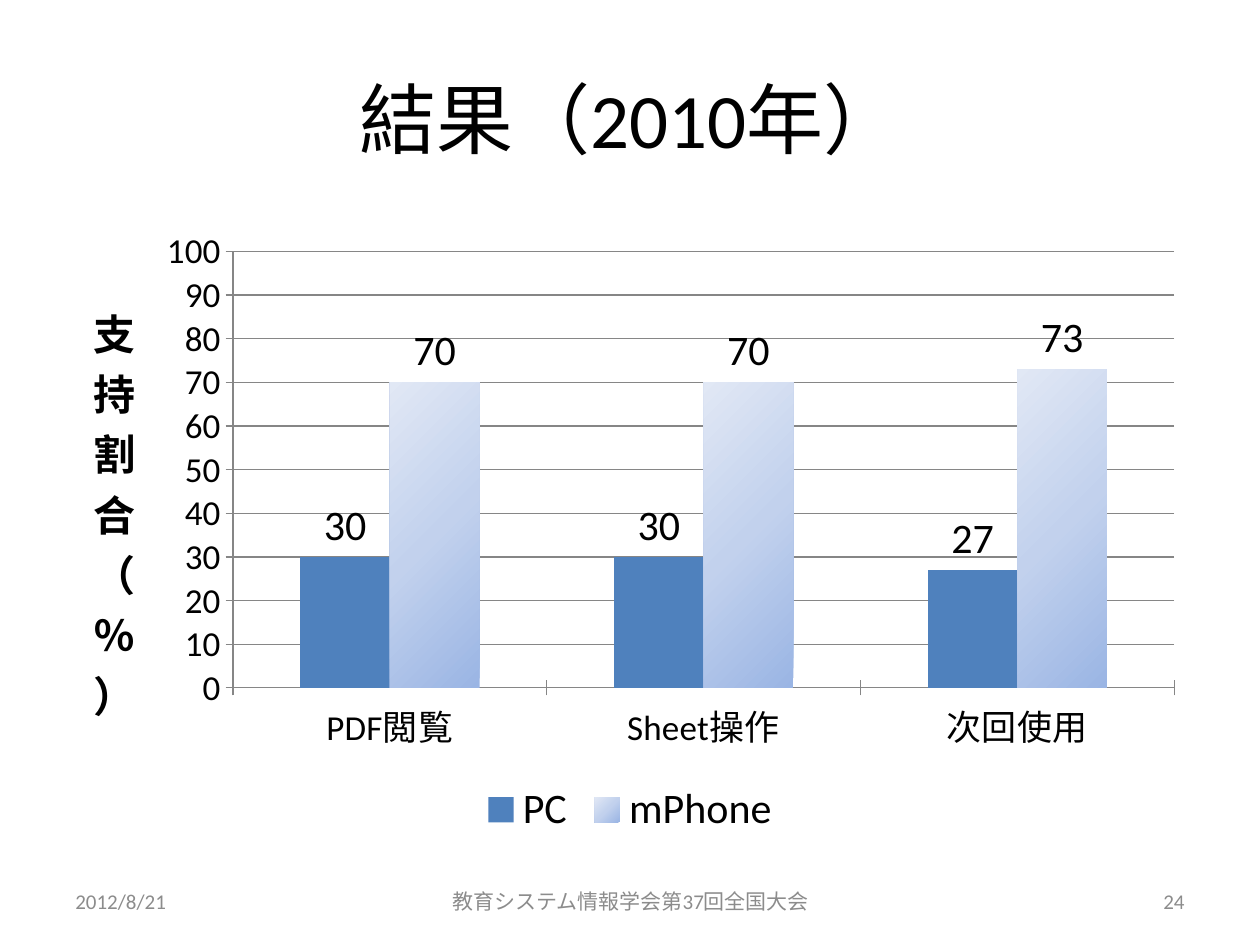
from lxml.etree import fromstring
from pptx import Presentation
from pptx.chart.data import CategoryChartData
from pptx.dml.color import RGBColor
from pptx.enum.chart import (XL_CHART_TYPE, XL_LABEL_POSITION,
                             XL_LEGEND_POSITION, XL_TICK_MARK)
from pptx.enum.text import MSO_ANCHOR, PP_ALIGN
from pptx.oxml.ns import nsdecls, qn
from pptx.util import Inches, Pt

HUES = {"ink": "000000", "page": "FFFFFF", "note": "8C8C8C",
        "rule": "868686", "bar": "4F81BD"}
FADE = [(0, "9AB5E4"), (50, "C2D1ED"), (100, "E1E8F5")]


def place(node, index, x, y, w=None, h=None):
    """Fix the place of a chart part, as shares of the chart's size."""
    for old in node.findall(qn("c:layout")):
        node.remove(old)
    marks = '<c:layoutTarget val="inner"/>' if w else ""
    marks += '<c:xMode val="edge"/><c:yMode val="edge"/>'
    sizes = zip("xywh", (x, y, w, h))
    marks += "".join(f'<c:{k} val="{v}"/>' for k, v in sizes if v is not None)
    node.insert(index, fromstring(
        f'<c:layout {nsdecls("c")}><c:manualLayout>{marks}'
        '</c:manualLayout></c:layout>'))


class Deck:
    """Style and current slide; places are shares of the slide's size."""
    face = "Calibri"

    def __init__(self, wide, high):
        self.file = Presentation()
        self.file.slide_width = Inches(wide)
        self.file.slide_height = Inches(high)
        self.slide = self.file.slides.add_slide(self.file.slide_layouts[6])
        fill = self.slide.background.fill
        fill.solid()
        fill.fore_color.rgb = self.hue("page")

    def hue(self, name):
        return RGBColor.from_string(HUES[name])

    def area(self, x, y, w, h):
        wide, high = self.file.slide_width, self.file.slide_height
        return int(x * wide), int(y * high), int(w * wide), int(h * high)

    def style(self, font, size, hue="ink", bold=False):
        font.name, font.size, font.bold = self.face, Pt(size), bold
        font.color.rgb = self.hue(hue)

    def text(self, words, box, size, hue="ink", align=PP_ALIGN.LEFT):
        frame = self.slide.shapes.add_textbox(*self.area(*box)).text_frame
        frame.word_wrap = True
        frame.vertical_anchor = MSO_ANCHOR.MIDDLE
        frame.text = words
        line = frame.paragraphs[0]
        line.alignment = align
        self.style(line.runs[0].font, size, hue)

    def fade(self, fill, stops, angle):
        fill.gradient()
        fill.gradient_angle = 0
        grad = fill.gradient_stops._gsLst
        for old in list(grad):
            grad.remove(old)
        for share, code in stops:
            grad.append(fromstring(
                f'<a:gs {nsdecls("a")} pos="{share * 1000}">'
                f'<a:srgbClr val="{code}"/></a:gs>'))
        grad.getparent().find(qn("a:lin")).set("ang", str(angle * 60000))

    def axis(self, axis):
        self.style(axis.tick_labels.font, 20)
        axis.major_tick_mark = XL_TICK_MARK.CROSS
        axis.format.line.color.rgb = self.hue("rule")

    def title(self, axis, words, size):
        """Name the value axis in stacked upright letters."""
        frame = axis.axis_title.text_frame
        frame.text = words
        self.style(frame.paragraphs[0].runs[0].font, size, bold=True)
        body = frame._txBody.find(qn("a:bodyPr"))
        body.set("rot", "0")
        body.set("vert", "wordArtVertRtl")
        place(axis.axis_title._element, 1, 0.02, 0.11)

    def columns(self, box, cats, series, label):
        data = CategoryChartData()
        data.categories = cats
        for name, values in series.items():
            data.add_series(name, values)
        chart = self.slide.shapes.add_chart(
            XL_CHART_TYPE.COLUMN_CLUSTERED, *self.area(*box), data).chart
        self.style(chart.font, 10)
        chart.has_title = False
        chart.has_legend = True
        chart.legend.position = XL_LEGEND_POSITION.BOTTOM
        chart.legend.include_in_layout = False
        self.style(chart.legend.font, 24)

        side = chart.value_axis
        self.axis(chart.category_axis)
        self.axis(side)
        side.minimum_scale, side.maximum_scale = 0, 100
        side.major_unit = 10
        side.major_gridlines.format.line.color.rgb = self.hue("rule")
        self.title(side, label, 24)

        plot = chart.plots[0]
        plot.gap_width, plot.overlap = 150, 0
        plot.vary_by_categories = False
        for bars in plot.series:
            marks = bars.data_labels
            marks.show_value = True
            marks.position = XL_LABEL_POSITION.OUTSIDE_END
            self.style(marks.font, 24)
        solid, faded = (bars.format.fill for bars in plot.series)
        solid.solid()
        solid.fore_color.rgb = self.hue("bar")
        self.fade(faded, FADE, 225)
        place(chart._chartSpace.chart.plotArea, 0, 0.15, 0.05, 0.83, 0.7)


def main():
    deck = Deck(10, 7.5)
    deck.text("結果（2010年）", (0.05, 0.04, 0.9, 0.17), 44,
              align=PP_ALIGN.CENTER)
    deck.columns((0.05, 0.233, 0.9, 0.66),
                 ["PDF閲覧", "Sheet操作", "次回使用"],
                 {"PC": (30, 30, 27), "mPhone": (70, 70, 73)},
                 "支持割合（％）")
    notes = [("2012/8/21", 0.05, 0.233, PP_ALIGN.LEFT),
             ("教育システム情報学会第37回全国大会", 0.342, 0.317, PP_ALIGN.CENTER),
             ("24", 0.717, 0.233, PP_ALIGN.RIGHT)]
    for words, left, width, align in notes:
        deck.text(words, (left, 0.927, width, 0.053), 12, "note", align)
    deck.file.save("out.pptx")


if __name__ == "__main__":
    main()
